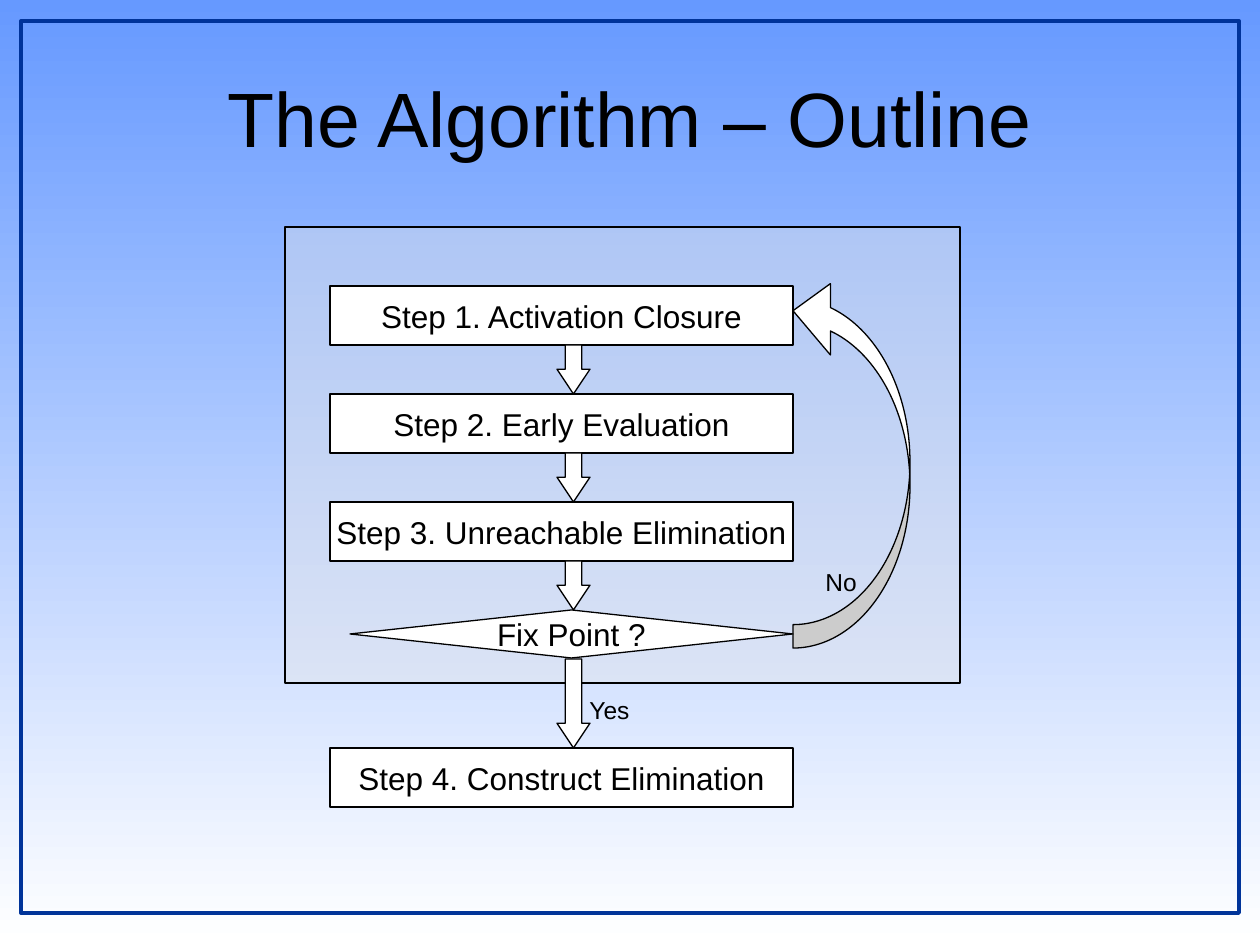
from lxml import etree
from pptx import Presentation
from pptx import util as u
from pptx.dml.color import RGBColor
from pptx.enum import shapes, text
from pptx.oxml.ns import qn

EMU_PER_PX = 914400 / 126
FONT = "Arial"
COLORS = {
    "sky": "6699FF",
    "white": "FFFFFF",
    "frame": "003399",
    "panel": "E6E6E6",
    "ink": "000000",
}
SHAPE = shapes.MSO_SHAPE
STEP_LEFT, STEP_TOP, STEP_WIDTH, STEP_HEIGHT = 330, 286, 463, 59
STEP_PITCH = 108
ARROW_LEFT, ARROW_WIDTH = 557, 33
LOOP_STEPS = [
    "Step 1. Activation Closure",
    "Step 2. Early Evaluation",
    "Step 3. Unreachable Elimination",
]


def px(length):
    return u.Emu(round(length * EMU_PER_PX))


def color(name):
    return RGBColor.from_string(COLORS[name])


def apply_format(target, values):
    for name, value in values.items():
        setattr(target, name, value)


def write(shape, content, size, align, frame_format):
    frame = shape.text_frame
    apply_format(frame, frame_format)
    paragraph = frame.paragraphs[0]
    paragraph.text = content
    paragraph.alignment = align
    apply_format(paragraph.font, {"name": FONT, "size": u.Pt(size)})
    paragraph.font.color.rgb = color("ink")


def paint_background(slide):
    fill = slide.background.fill
    fill.gradient()
    fill.gradient_angle = 270
    for stop, name, position in zip(fill.gradient_stops, ("sky", "white"), (0, 1)):
        stop.color.rgb = color(name)
        stop.position = position


def add_outlined(slide, kind, box, fill="white", line="ink", weight=0.75, adjust=()):
    """Add a preset shape; a fill of None leaves it hollow."""
    shape = slide.shapes.add_shape(kind, *map(px, box))
    shape.shadow.inherit = False
    if fill:
        shape.fill.solid()
        shape.fill.fore_color.rgb = color(fill)
    else:
        shape.fill.background()
    shape.line.color.rgb = color(line)
    shape.line.width = u.Pt(weight)
    for index, value in enumerate(adjust):
        shape.adjustments[index] = value
    return shape


def set_opacity(shape, percent):
    rgb = shape.fill._xPr.find(qn("a:solidFill"))[0]
    etree.SubElement(rgb, qn("a:alpha")).set("val", str(percent * 1000))


def add_node(slide, kind, box, content):
    node = add_outlined(slide, kind, box)
    write(node, content, 18, text.PP_ALIGN.CENTER,
          {"word_wrap": False, "vertical_anchor": text.MSO_ANCHOR.MIDDLE})


def add_step(slide, top, content):
    add_node(slide, SHAPE.RECTANGLE, (STEP_LEFT, top, STEP_WIDTH, STEP_HEIGHT), content)


def add_down_arrow(slide, top, height):
    add_outlined(slide, SHAPE.DOWN_ARROW, (ARROW_LEFT, top, ARROW_WIDTH, height),
                 adjust=(0.5, 0.75))


def add_label(slide, box, content):
    label = slide.shapes.add_textbox(*map(px, box))
    write(label, content, 14, text.PP_ALIGN.LEFT, {"word_wrap": True})


def place_title(slide, box, content):
    title = slide.shapes.title
    apply_format(title, dict(zip(("left", "top", "width", "height"), map(px, box))))
    write(title, content, 44, text.PP_ALIGN.CENTER,
          {"word_wrap": True, "auto_size": text.MSO_AUTO_SIZE.NONE,
           "vertical_anchor": text.MSO_ANCHOR.MIDDLE})


def main():
    presentation = Presentation()
    presentation.slide_width, presentation.slide_height = px(1260), px(945)
    slide = presentation.slides.add_slide(presentation.slide_layouts[5])
    paint_background(slide)
    add_outlined(slide, SHAPE.RECTANGLE, (21, 21, 1218, 892), None, "frame", 2.25)
    place_title(slide, (63, 38, 1134, 158), "The Algorithm – Outline")

    loop_panel = add_outlined(slide, SHAPE.RECTANGLE, (285, 227, 675, 456), "panel")
    set_opacity(loop_panel, 40)
    back_arrow = add_outlined(slide, SHAPE.CURVED_UP_ARROW, (665, 403, 373, 117),
                              adjust=(0.2, 0.61, 0.32))
    back_arrow.rotation = 270

    for index, content in enumerate(LOOP_STEPS):
        top = STEP_TOP + index * STEP_PITCH
        add_step(slide, top, content)
        add_down_arrow(slide, top + STEP_HEIGHT, STEP_PITCH - STEP_HEIGHT)
    add_node(slide, SHAPE.DIAMOND, (350, 610, 443, 48), "Fix Point ?")
    add_down_arrow(slide, 659, 89)
    add_step(slide, 748, "Step 4. Construct Elimination")

    add_label(slide, (813, 561, 58, 43), "No")
    add_label(slide, (577, 689, 69, 43), "Yes")
    presentation.save("out.pptx")


if __name__ == "__main__":
    main()
